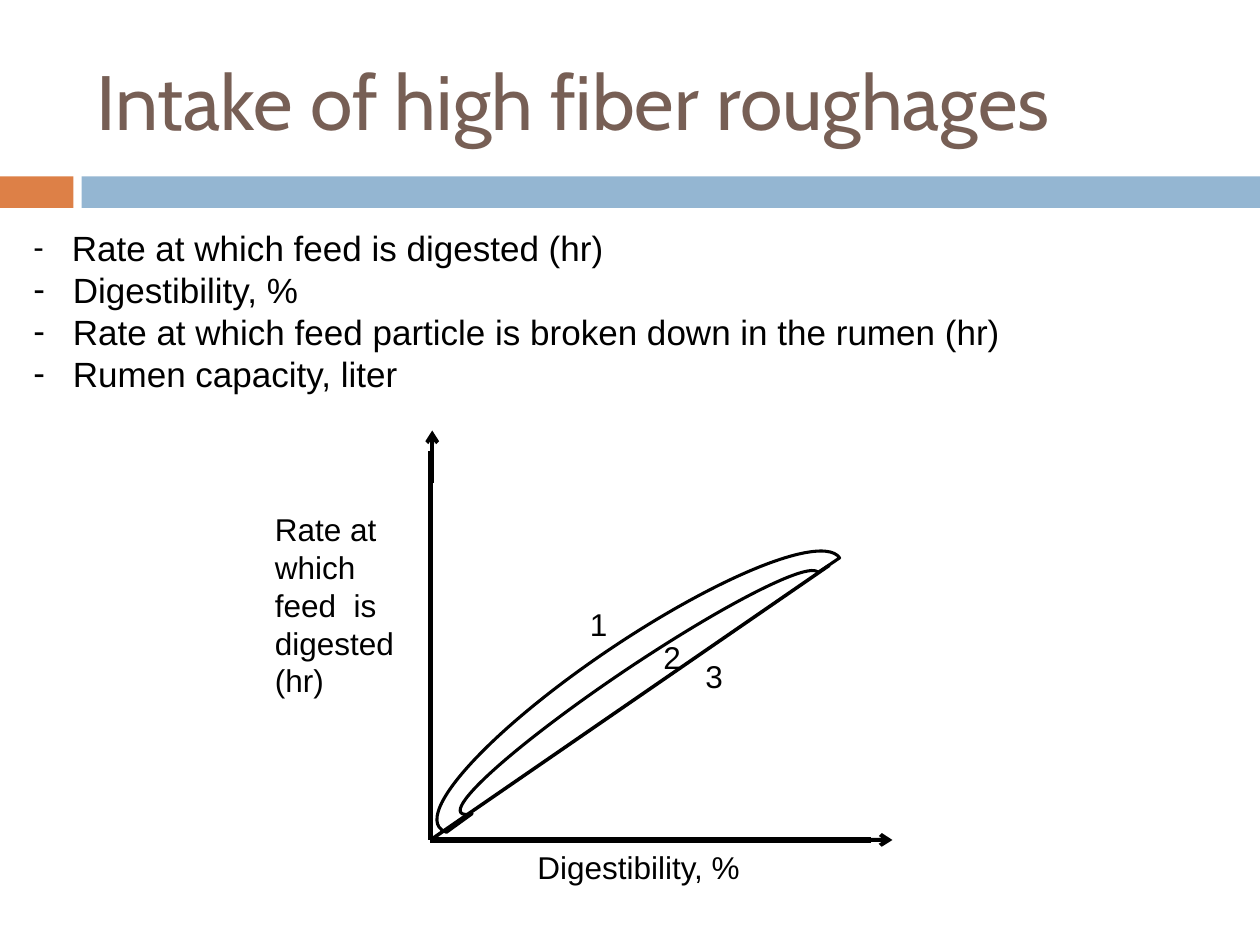
"""Build the slide on intake of high fiber roughages."""
from lxml import etree
from pptx import Presentation
from pptx.dml.color import RGBColor
from pptx.enum.shapes import MSO_CONNECTOR, MSO_SHAPE
from pptx.enum.text import MSO_ANCHOR
from pptx.oxml.ns import qn
from pptx.util import Pt

STRAIGHT = MSO_CONNECTOR.STRAIGHT
RECTANGLE = MSO_SHAPE.RECTANGLE
BLOCK_ARC = MSO_SHAPE.BLOCK_ARC
MIDDLE = MSO_ANCHOR.MIDDLE
TOP = MSO_ANCHOR.TOP

BLACK = RGBColor(0x00, 0x00, 0x00)
ORANGE = RGBColor(0xDD, 0x80, 0x47)
BLUE = RGBColor(0x94, 0xB6, 0xD2)
BROWN = RGBColor(0x77, 0x5F, 0x55)

TITLE_FONT = {"name": "Cabin", "size": Pt(44)}
LABEL_FONT = {"name": "Arial", "size": Pt(18)}
BULLET_FONT = {"name": "Arial", "size": Pt(20)}


def add_run(paragraph, text, font_values, color=BLACK):
    run = paragraph.add_run()
    run.text = text
    for name, value in font_values.items():
        setattr(run.font, name, value)
    run.font.color.rgb = color


def add_text_box(left, top, width, height, anchor=TOP):
    shape = slide.shapes.add_textbox(Pt(left), Pt(top), Pt(width), Pt(height))
    shape.text_frame.word_wrap = True
    shape.text_frame.vertical_anchor = anchor
    return shape.text_frame


presentation = Presentation()
presentation.slide_width = Pt(720)
presentation.slide_height = Pt(540)
slide = presentation.slides.add_slide(presentation.slide_layouts[6])

for left, width, color in [(0, 42, ORANGE), (46.6, 673.4, BLUE)]:
    band = slide.shapes.add_shape(RECTANGLE, Pt(left), Pt(100.8), Pt(width), Pt(18))
    band.shadow.inherit = False
    band.fill.solid()
    band.fill.fore_color.rgb = color
    band.line.fill.background()

title = add_text_box(48, 18, 642, 78, MIDDLE)
add_run(title.paragraphs[0], "Intake of high fiber roughages", TITLE_FONT, BROWN)

origin = (246, 480)
lines = [
    ((246, 258), origin, 3, False),
    ((498, 480), origin, 3, False),
    (origin, (474, 323), 2, False),
    ((247, 276), (247, 246), 2.25, True),
    ((486.5, 479.8), (510, 480), 2.25, True),
]
for start, end, weight, has_arrow in lines:
    connector = slide.shapes.add_connector(STRAIGHT, *map(Pt, start + end))
    connector.line.color.rgb = BLACK
    connector.line.width = Pt(weight)
    if has_arrow:
        line_element = connector.line._get_or_add_ln()
        etree.SubElement(line_element, qn("a:tailEnd"), type="arrow")
    etree.SubElement(connector._element.spPr, qn("a:effectLst"))

arc = slide.shapes.add_shape(BLOCK_ARC, Pt(227.5), Pt(365.8), Pt(275.8), Pt(59.8))
arc.shadow.inherit = False
arc.rotation = 326.1
for index, value in enumerate([106.773, 0, 0.25]):
    arc.adjustments[index] = value
arc.fill.background()
arc.line.color.rgb = BLACK
arc.line.width = Pt(1.75)

labels = [
    ("Rate at which feed  is digested (hr)", 150, 288, 84, 116.6),
    ("Digestibility, %", 300, 481, 150, 29),
    ("1", 330, 342, 24, 29),
    ("2", 372, 361, 36, 29),
    ("3", 396, 372, 24, 29),
]
for text, *box in labels:
    add_run(add_text_box(*box).paragraphs[0], text, LABEL_FONT)

factors = [
    "Rate at which feed is digested (hr)",
    "Digestibility, %",
    "Rate at which feed particle is broken down in the rumen (hr)",
    "Rumen capacity, liter",
]
factor_frame = add_text_box(12, 126, 576, 104.4)
for index, factor in enumerate(factors):
    paragraph = factor_frame.paragraphs[0] if index == 0 else factor_frame.add_paragraph()
    properties = paragraph._p.get_or_add_pPr()
    properties.set("marL", str(Pt(17)))
    properties.set("indent", str(-Pt(17)))
    etree.SubElement(properties, qn("a:buFont"), typeface="Arial")
    etree.SubElement(properties, qn("a:buChar"), char="-")
    add_run(paragraph, " ", LABEL_FONT if index == 0 else BULLET_FONT)
    add_run(paragraph, factor, BULLET_FONT)

presentation.save("out.pptx")
